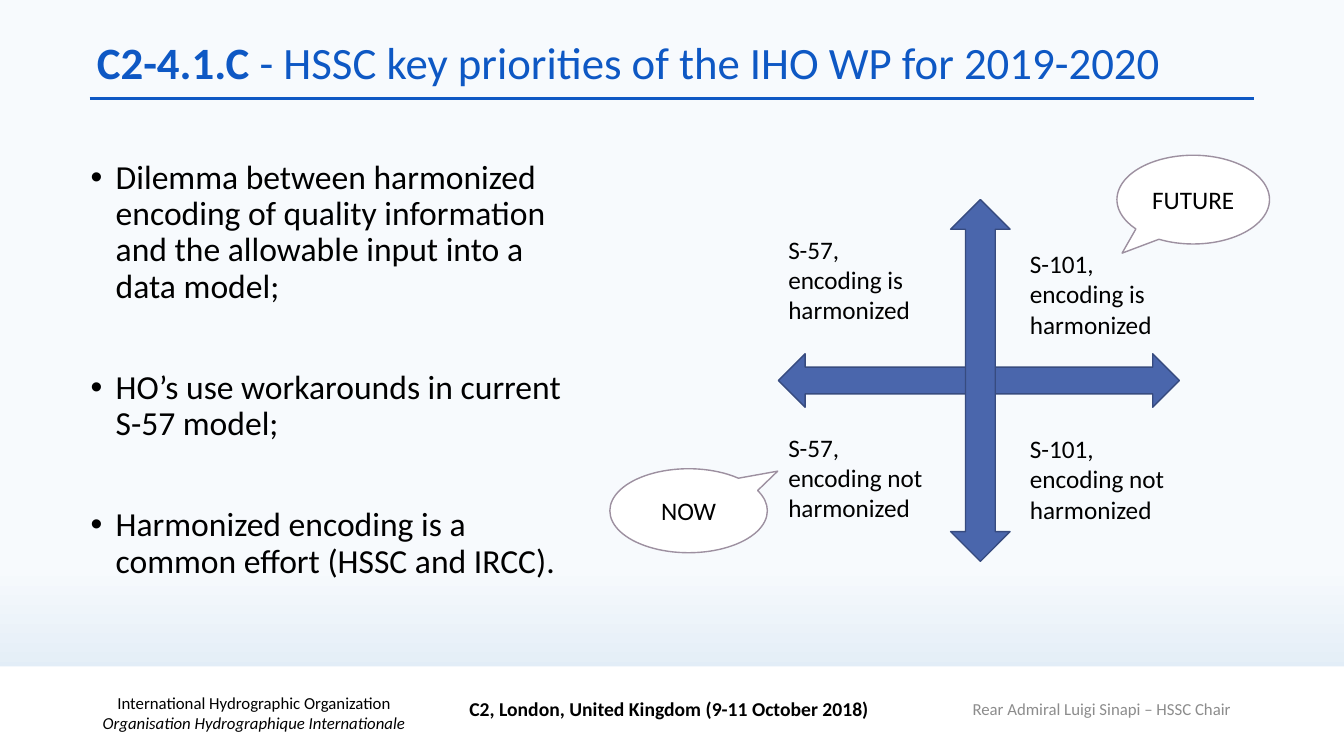
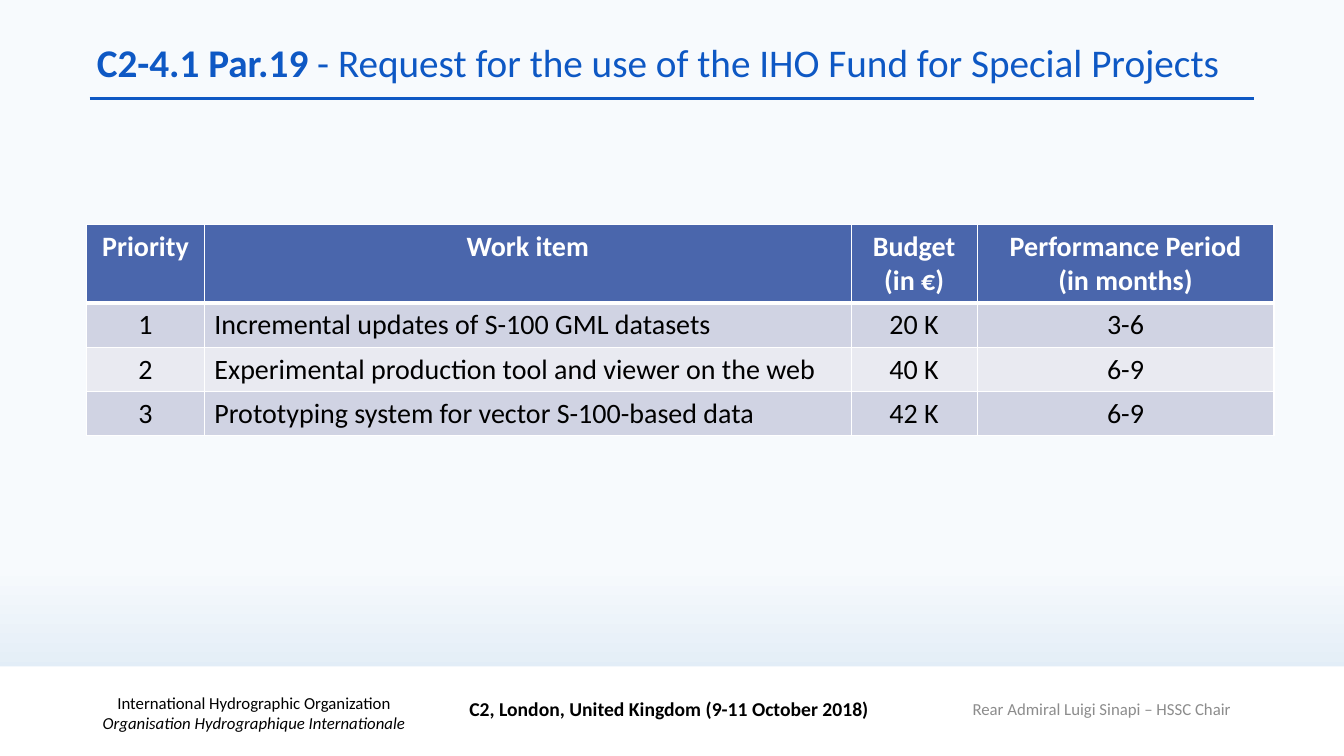
"""Build two committee slides: a priorities matrix and a funding table."""
from dataclasses import dataclass

from pptx import Presentation
from pptx.dml.color import RGBColor
from pptx.enum.shapes import MSO_CONNECTOR, MSO_SHAPE
from pptx.enum.text import MSO_ANCHOR, MSO_AUTO_SIZE, PP_ALIGN
from pptx.oxml.ns import qn
from pptx.util import Pt
from lxml import etree

LEFT, CENTER = PP_ALIGN.LEFT, PP_ALIGN.CENTER
TOP, MIDDLE = MSO_ANCHOR.TOP, MSO_ANCHOR.MIDDLE
NO_AUTOFIT = MSO_AUTO_SIZE.NONE
STRAIGHT = MSO_CONNECTOR.STRAIGHT
RECTANGLE = MSO_SHAPE.RECTANGLE
DOUBLE_ARROW = MSO_SHAPE.LEFT_RIGHT_ARROW
CALLOUT = MSO_SHAPE.OVAL_CALLOUT


@dataclass(frozen=True)
class Theme:
    """Hold the font, colours and type sizes of the presentation."""

    font: str = "Calibri"
    title: RGBColor = RGBColor.from_string("0E58C4")
    text: RGBColor = RGBColor.from_string("000000")
    muted: RGBColor = RGBColor.from_string("8C8C8C")
    white: RGBColor = RGBColor.from_string("FFFFFF")
    accent: RGBColor = RGBColor.from_string("4A66AC")
    accent_line: RGBColor = RGBColor.from_string("374B7F")
    callout_line: RGBColor = RGBColor.from_string("9D90A0")
    row_dark: RGBColor = RGBColor.from_string("D0D3E3")
    row_light: RGBColor = RGBColor.from_string("E9EAF1")
    sky_top: RGBColor = RGBColor.from_string("F7FAFD")
    sky_bottom: RGBColor = RGBColor.from_string("D0E2F1")
    title_size: int = 32
    long_title_size: int = 28
    body_size: int = 24
    table_size: int = 20
    label_size: int = 18
    event_size: int = 14
    footer_size: int = 12


THEME = Theme()


def write(paragraph, text, size, color=THEME.text, bold=False, italic=False, align=LEFT):
    """Add a formatted run to a paragraph."""
    paragraph.alignment = align
    run = paragraph.add_run()
    run.text = text
    font = run.font
    font.name, font.size = THEME.font, Pt(size)
    font.bold, font.italic = bold, italic
    font.color.rgb = color


def add_box(shapes, left, top, width, height, anchor=TOP):
    """Add a wrapping text box and return its text frame."""
    box = shapes.add_textbox(Pt(left), Pt(top), Pt(width), Pt(height))
    frame = box.text_frame
    frame.word_wrap = True
    frame.vertical_anchor = anchor
    return frame


def add_figure(shapes, kind, left, top, width, height, fill, line=None):
    """Add a flat preset shape with an optional thin outline."""
    shape = shapes.add_shape(kind, Pt(left), Pt(top), Pt(width), Pt(height))
    shape.shadow.inherit = False
    shape.fill.solid()
    shape.fill.fore_color.rgb = fill
    if line is None:
        shape.line.fill.background()
    else:
        shape.line.color.rgb = line
        shape.line.width = Pt(1)
    return shape


def add_callout(shapes, text, left, top, width, height, pointer):
    """Add a speech bubble whose pointer is given relative to its centre."""
    callout = add_figure(shapes, CALLOUT, left, top, width, height,
                         THEME.white, THEME.callout_line)
    for index, offset in enumerate(pointer):
        callout.adjustments[index] = offset
    callout.text_frame.vertical_anchor = MIDDLE
    write(callout.text_frame.paragraphs[0], text, THEME.label_size, align=CENTER)


def add_bullets(shapes, items, left, top, width, height, gap):
    """Add a bulleted list with a gap between items."""
    frame = add_box(shapes, left, top, width, height)
    for index, item in enumerate(items):
        paragraph = frame.add_paragraph() if index else frame.paragraphs[0]
        paragraph.line_spacing = 0.9
        paragraph.space_before = Pt(gap if index else 0)
        properties = paragraph._p.get_or_add_pPr()
        properties.set("marL", str(Pt(18)))
        properties.set("indent", str(Pt(-18)))
        etree.SubElement(properties, qn("a:buFont"), typeface="Arial")
        etree.SubElement(properties, qn("a:buChar"), char="•")
        write(paragraph, item, THEME.body_size)


def set_borders(cell, **widths):
    """Draw white cell borders, one point wide unless a side is given."""
    properties = cell._tc.get_or_add_tcPr()
    for side in "LRTB":
        border = etree.SubElement(properties, qn(f"a:ln{side}"),
                                  w=str(Pt(widths.get(side, 1))))
        fill = etree.SubElement(border, qn("a:solidFill"))
        etree.SubElement(fill, qn("a:srgbClr"), val=str(THEME.white))


def add_table(shapes, rows, left, top, widths, heights, left_column):
    """Add a table with a dark header, banded rows and one left-aligned column."""
    table = shapes.add_table(len(rows), len(widths), Pt(left), Pt(top),
                             Pt(sum(widths)), Pt(sum(heights))).table
    for column, width in zip(table.columns, widths):
        column.width = Pt(width)
    for row_index, (values, height) in enumerate(zip(rows, heights)):
        table.rows[row_index].height = Pt(height)
        header = row_index == 0
        band = THEME.row_dark if row_index % 2 else THEME.row_light
        for column_index, value in enumerate(values):
            cell = table.cell(row_index, column_index)
            set_borders(cell, **({"B": 3} if header else {"T": 3} if row_index == 1 else {}))
            cell.fill.solid()
            cell.fill.fore_color.rgb = THEME.accent if header else band
            centered = header or column_index != left_column
            for line_index, line in enumerate(value.split("\n")):
                frame = cell.text_frame
                paragraph = frame.add_paragraph() if line_index else frame.paragraphs[0]
                write(paragraph, line, THEME.table_size, bold=header,
                      color=THEME.white if header else THEME.text,
                      align=CENTER if centered else LEFT)


def set_background(master):
    """Give every slide the pale gradient."""
    fill = master.background.fill
    fill.gradient()
    fill.gradient_angle = 270
    stops = ((0.75, THEME.sky_top), (1, THEME.sky_bottom))
    for stop, (position, color) in zip(fill.gradient_stops, stops):
        stop.position = position
        stop.color.rgb = color


def add_footer(shapes):
    """Add the white band with the organisation, event and speaker."""
    add_figure(shapes, RECTANGLE, 0, 476, 960, 64, THEME.white)
    organisation = add_box(shapes, 19.5, 494.5, 324, 29, MIDDLE).paragraphs[0]
    write(organisation, "International Hydrographic Organization",
          THEME.footer_size, align=CENTER)
    organisation.add_line_break()
    write(organisation, "Organisation Hydrographique Internationale",
          THEME.footer_size, italic=True, align=CENTER)
    event = add_box(shapes, 316, 494, 324, 29).paragraphs[0]
    write(event, "C2, London, United Kingdom (9-11 October 2018)",
          THEME.event_size, bold=True, align=CENTER)
    speaker = add_box(shapes, 625, 492, 324, 29, MIDDLE).paragraphs[0]
    write(speaker, "Rear Admiral Luigi Sinapi – HSSC Chair",
          THEME.footer_size, color=THEME.muted, align=CENTER)


def add_slide(presentation, code, subject, size):
    """Add a slide with the shared title, rule and footer."""
    slide = presentation.slides.add_slide(presentation.slide_layouts[5])
    title = slide.shapes.title
    title.left, title.top, title.width, title.height = Pt(62), Pt(21.5), Pt(832), Pt(50)
    frame = title.text_frame
    frame.auto_size = NO_AUTOFIT
    frame.word_wrap = True
    frame.vertical_anchor = MIDDLE
    paragraph = frame.paragraphs[0]
    paragraph.line_spacing = 0.9
    write(paragraph, code, size, color=THEME.title, bold=True)
    write(paragraph, f" - {subject}", size, color=THEME.title)
    rule = slide.shapes.add_connector(STRAIGHT, Pt(64), Pt(70.5), Pt(896), Pt(70.5))
    rule.line.color.rgb = THEME.title
    rule.line.width = Pt(2.25)
    etree.SubElement(rule._element.spPr, qn("a:effectLst"))
    add_footer(slide.shapes)
    return slide


def add_matrix(shapes):
    """Add the crossed arrows, quadrant labels and callouts."""
    add_figure(shapes, DOUBLE_ARROW, 556, 252.7, 286.5, 38.2,
               THEME.accent, THEME.accent_line)
    vertical = add_figure(shapes, DOUBLE_ARROW, 571, 250.5, 258.5, 42.5,
                          THEME.accent, THEME.accent_line)
    vertical.rotation = 90
    quadrants = (
        ("S-57, encoding not harmonized", 556, 305),
        ("S-101, encoding not harmonized", 728.6, 306),
        ("S-57, encoding is harmonized", 556, 163.5),
        ("S-101, encoding is harmonized", 728.6, 174),
    )
    for label, left, top in quadrants:
        frame = add_box(shapes, left, top, 114, 65.5)
        write(frame.paragraphs[0], label, THEME.label_size)
    add_callout(shapes, "NOW", 435.6, 334.8, 112.5, 60, (0.566, -0.471))
    add_callout(shapes, "FUTURE", 797.8, 110.9, 109, 63.4, (-0.466, 0.603))


def build_priorities(presentation):
    """Build the slide on key priorities."""
    slide = add_slide(presentation, "C2-4.1.C",
                      "HSSC key priorities of the IHO WP for 2019-2020",
                      THEME.title_size)
    add_matrix(slide.shapes.add_group_shape().shapes)
    add_bullets(slide.shapes, (
        "Dilemma between harmonized encoding of quality information "
        "and the allowable input into a data model;",
        "HO’s use workarounds in current S-57 model;",
        "Harmonized encoding is a common effort (HSSC and IRCC).",
    ), 57.6, 111, 355.7, 345, gap=46.4)


def build_funding(presentation):
    """Build the slide on the funding request."""
    slide = add_slide(presentation, "C2-4.1 Par.19",
                      "Request for the use of the IHO Fund for Special Projects",
                      THEME.long_title_size)
    add_table(slide.shapes, (
        ("Priority", "Work item", "Budget (in €)", "Performance Period\n(in months)"),
        ("1", "Incremental updates of S-100 GML datasets", "20 K", "3-6"),
        ("2", "Experimental production tool and viewer on the web", "40 K", "6-9"),
        ("3", "Prototyping system for vector S-100-based data", "42 K", "6-9"),
    ), 62, 160.6, (84, 462, 90, 212), (56, 31.5, 31.5, 31.5), left_column=1)


def main():
    """Create and save the presentation."""
    presentation = Presentation()
    presentation.slide_width, presentation.slide_height = Pt(960), Pt(540)
    set_background(presentation.slide_master)
    build_priorities(presentation)
    build_funding(presentation)
    presentation.save("out.pptx")


if __name__ == "__main__":
    main()
